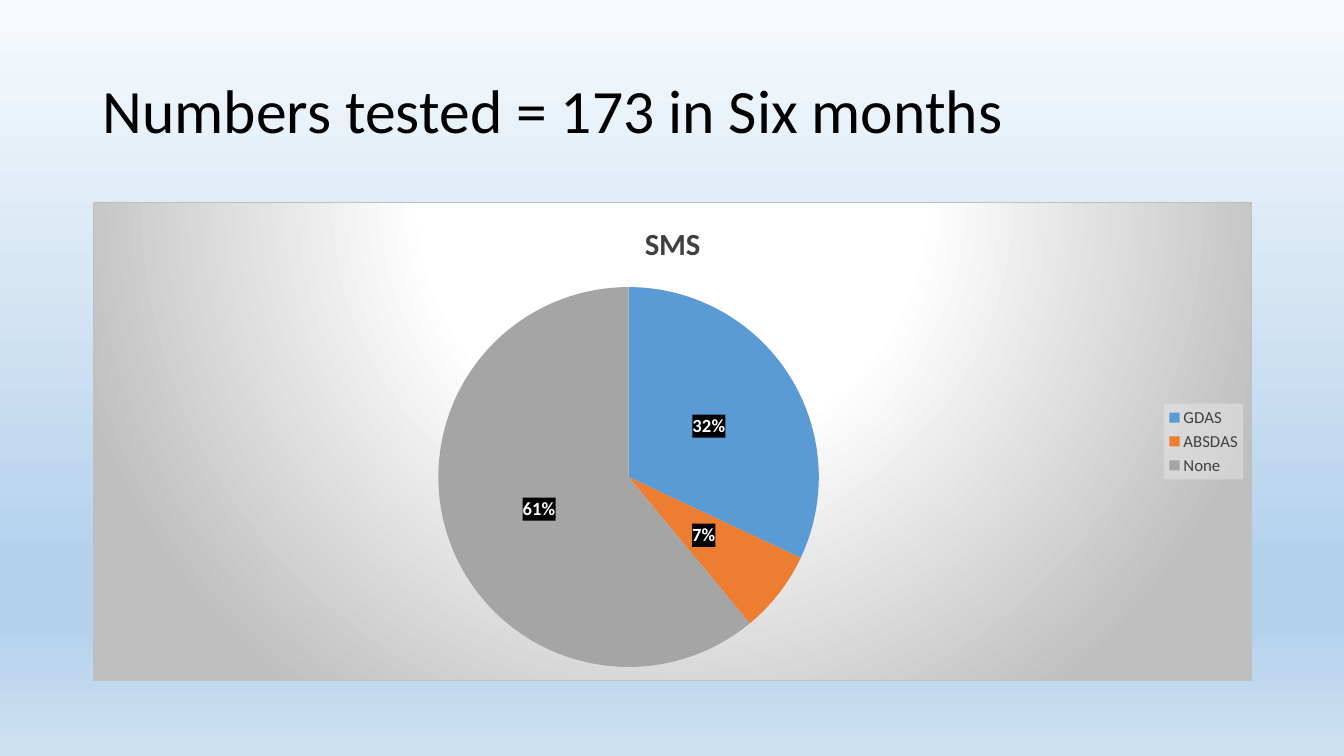
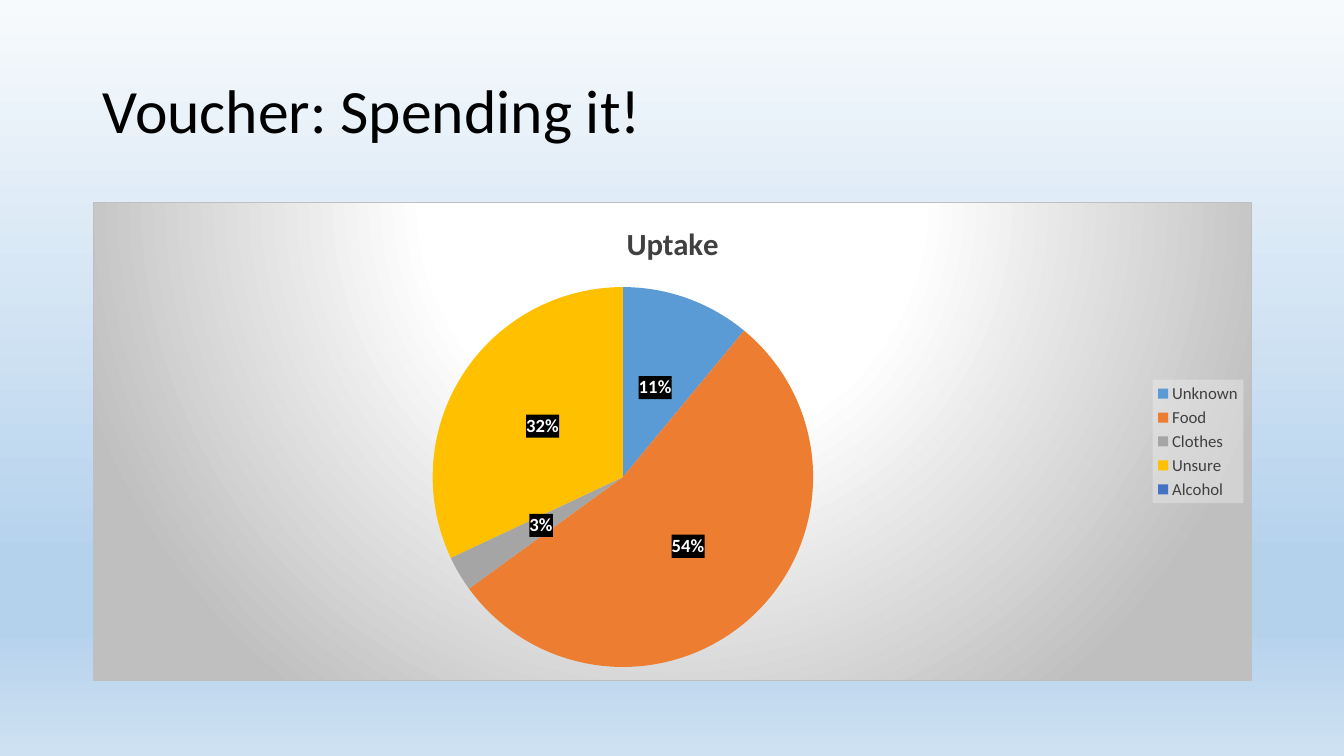
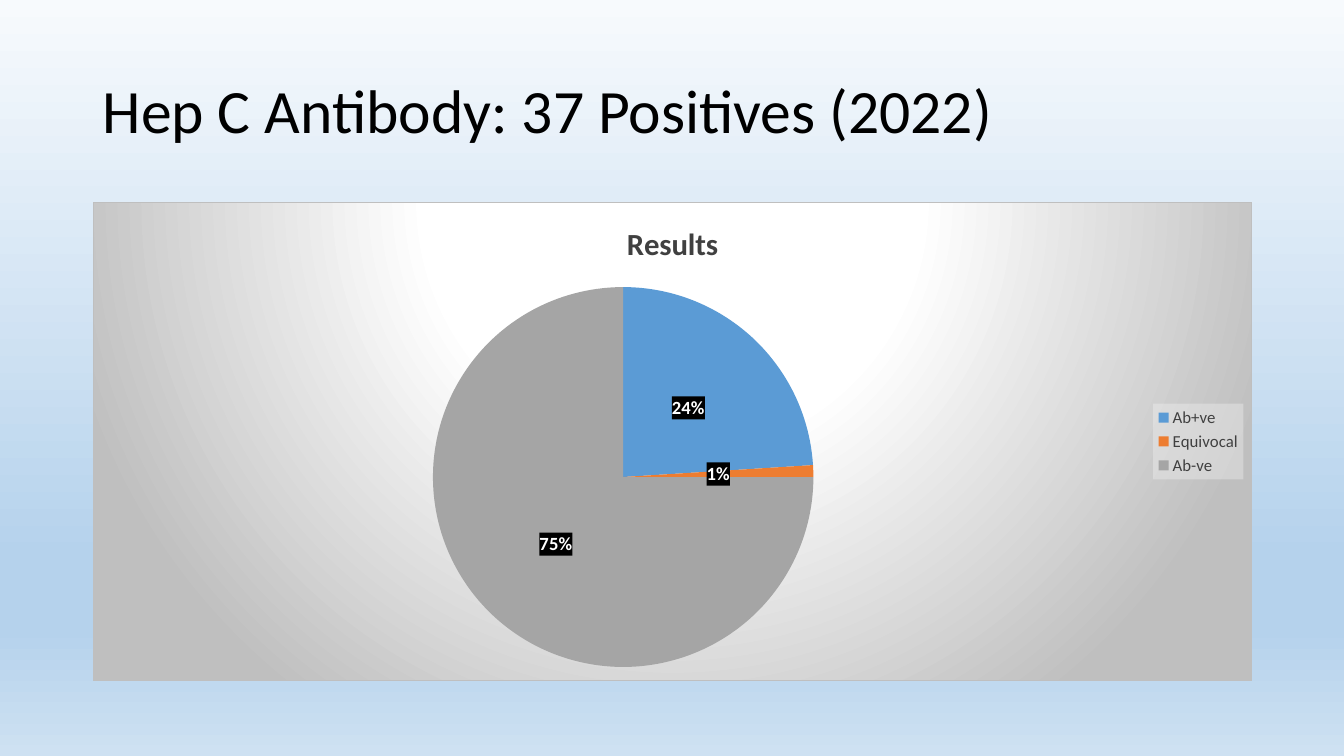
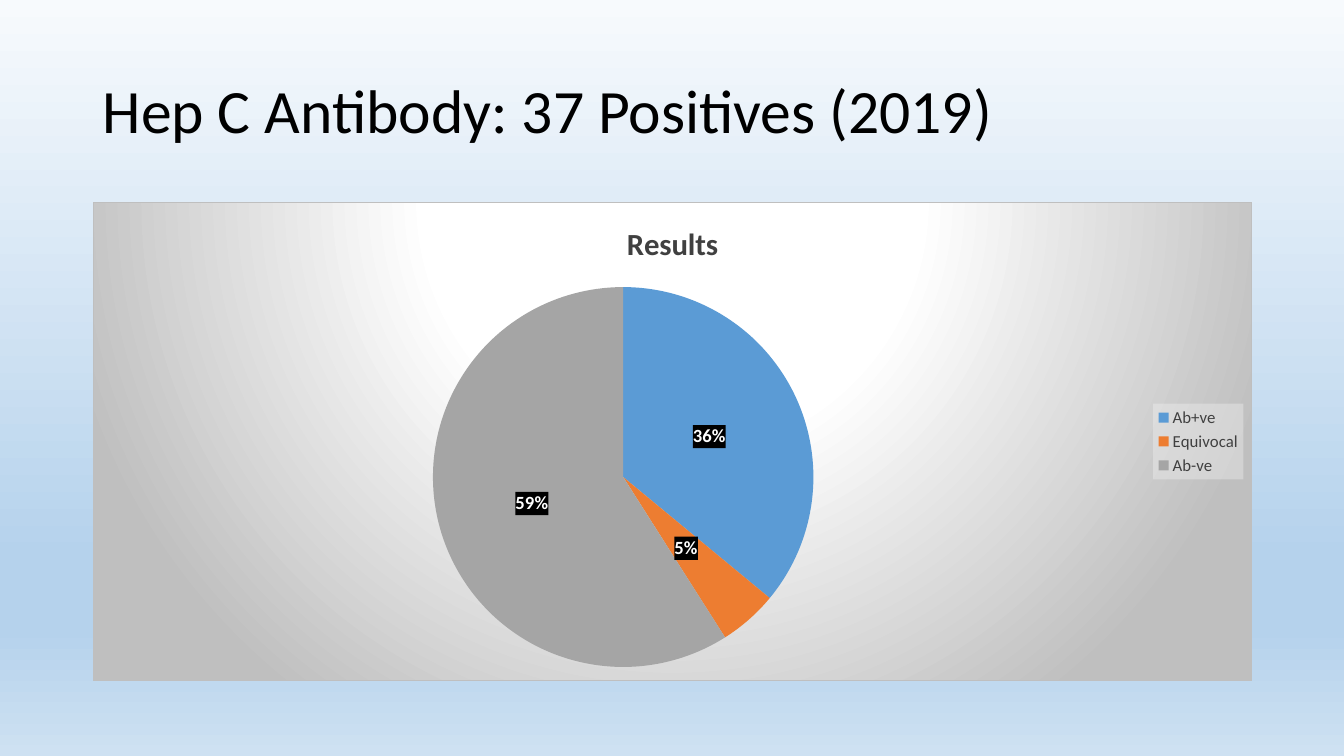
from pptx import Presentation, util as u
from pptx.chart import data as cd
from pptx.dml import color as dc
from pptx.enum import chart as ec, text as et
from pptx.oxml import parse_xml
from pptx.oxml.ns import nsdecls

FONT = "Calibri"
INK, GREY, PALE, WHITE = "000000", "404040", "BFBFBF", "FFFFFF"
SLICES = ["5B9BD5", "ED7D31", "A5A5A5", "FFC000", "4472C4"]
SKY = [(0, "F7FAFD"), (74, "B5D2EC"), (83, "B5D2EC"), (100, "CEE1F2")]
GLOW = [(0, WHITE), (39, WHITE), (100, PALE)]
LEFT, WIDTH = u.Inches(0.92), u.Inches(11.5)
SLIDES = [
    ("Numbers tested = 173 in Six months", "SMS",
     {"GDAS": 32, "ABSDAS": 7, "None": 61}),
    ("Voucher: Spending it!", "Uptake",
     {"Unknown": 11, "Food": 54, "Clothes": 3, "Unsure": 32, "Alcohol": None}),
    ("Hep C Antibody: 37 Positives (2022)", "Results",
     {"Ab+ve": 24, "Equivocal": 1, "Ab-ve": 75}),
    ("Hep C Antibody: 37 Positives (2019)", "Results",
     {"Ab+ve": 36, "Equivocal": 5, "Ab-ve": 59}),
]


def rgb(code):
    return dc.RGBColor.from_string(code)


def blend(stops, shade):
    marks = "".join(
        f'<a:gs pos="{pos * 1000}"><a:srgbClr val="{code}"/></a:gs>'
        for pos, code in stops)
    return (f'<a:gradFill {nsdecls("a")} rotWithShape="1">'
            f'<a:gsLst>{marks}</a:gsLst>{shade}</a:gradFill>')


def sheer(code, alpha):
    return (f'<a:solidFill><a:srgbClr val="{code}">'
            f'<a:alpha val="{alpha * 1000}"/></a:srgbClr></a:solidFill>')


def paint(node, fill, line="<a:ln><a:noFill/></a:ln>"):
    node.find("{*}txPr").addprevious(parse_xml(
        f'<c:spPr {nsdecls("c", "a")}>{fill}{line}</c:spPr>'))


class Deck:
    """Holds the shared style and the current slide."""

    def __init__(self):
        self.prs = Presentation()
        self.prs.slide_width = u.Inches(13.33)
        self.prs.slide_height = u.Inches(7.5)
        master = self.prs.slide_master
        master.background.fill.solid()
        solid = master.element.xpath(".//p:bgPr/a:solidFill")[0]
        sky = parse_xml(blend(SKY, '<a:lin ang="5400000" scaled="0"/>'))
        solid.getparent().replace(solid, sky)

    def add(self):
        self.slide = self.prs.slides.add_slide(self.prs.slide_layouts[6])

    def style(self, font, size, code, bold=False):
        font.name, font.size, font.bold = FONT, u.Pt(size), bold
        font.color.rgb = rgb(code)

    def title(self, words):
        box = self.slide.shapes.add_textbox(
            LEFT, u.Inches(0.4), WIDTH, u.Inches(1.45))
        frame = box.text_frame
        frame.word_wrap = True
        frame.vertical_anchor = et.MSO_ANCHOR.MIDDLE
        para = frame.paragraphs[0]
        para.text, para.line_spacing = words, 0.9
        self.style(para.font, 44, INK)

    def pie(self, name, parts):
        data = cd.CategoryChartData()
        data.categories = list(parts)
        data.add_series(name, list(parts.values()))
        chart = self.slide.shapes.add_chart(
            ec.XL_CHART_TYPE.PIE, LEFT, u.Inches(2), WIDTH, u.Inches(4.76),
            data).chart
        self.style(chart.font, 10, INK)
        glow = blend(GLOW, '<a:path path="circle"><a:fillToRect l="50000" '
                     't="-80000" r="50000" b="180000"/></a:path>')
        edge = (f'<a:ln w="{u.Pt(0.75)}"><a:solidFill>'
                f'<a:srgbClr val="{PALE}"/></a:solidFill></a:ln>')
        paint(chart._chartSpace, glow, edge)

        chart.has_title = True
        para = chart.chart_title.text_frame.paragraphs[0]
        para.text = name
        self.style(para.font, 22, GREY, True)

        chart.has_legend = True
        legend = chart.legend
        legend.position = ec.XL_LEGEND_POSITION.RIGHT
        legend.include_in_layout = False
        self.style(legend.font, 12, GREY)
        paint(legend._element, sheer("F2F2F2", 39))

        plot = chart.plots[0]
        plot.vary_by_categories = True
        row = plot.series[0]
        for spot, code in zip(range(len(parts)), SLICES):
            fill = row.points[spot].format.fill
            fill.solid()
            fill.fore_color.rgb = rgb(code)
        tags = row.data_labels
        tags.show_value, tags.show_percentage = False, True
        tags.number_format, tags.number_format_is_linked = "0%", False
        tags.position = ec.XL_LABEL_POSITION.CENTER
        self.style(tags.font, 13.3, WHITE, True)
        paint(tags._element, sheer(INK, 75))


def main():
    deck = Deck()
    for words, name, parts in SLIDES:
        deck.add()
        deck.title(words)
        deck.pie(name, parts)
    deck.prs.save("out.pptx")


if __name__ == "__main__":
    main()
